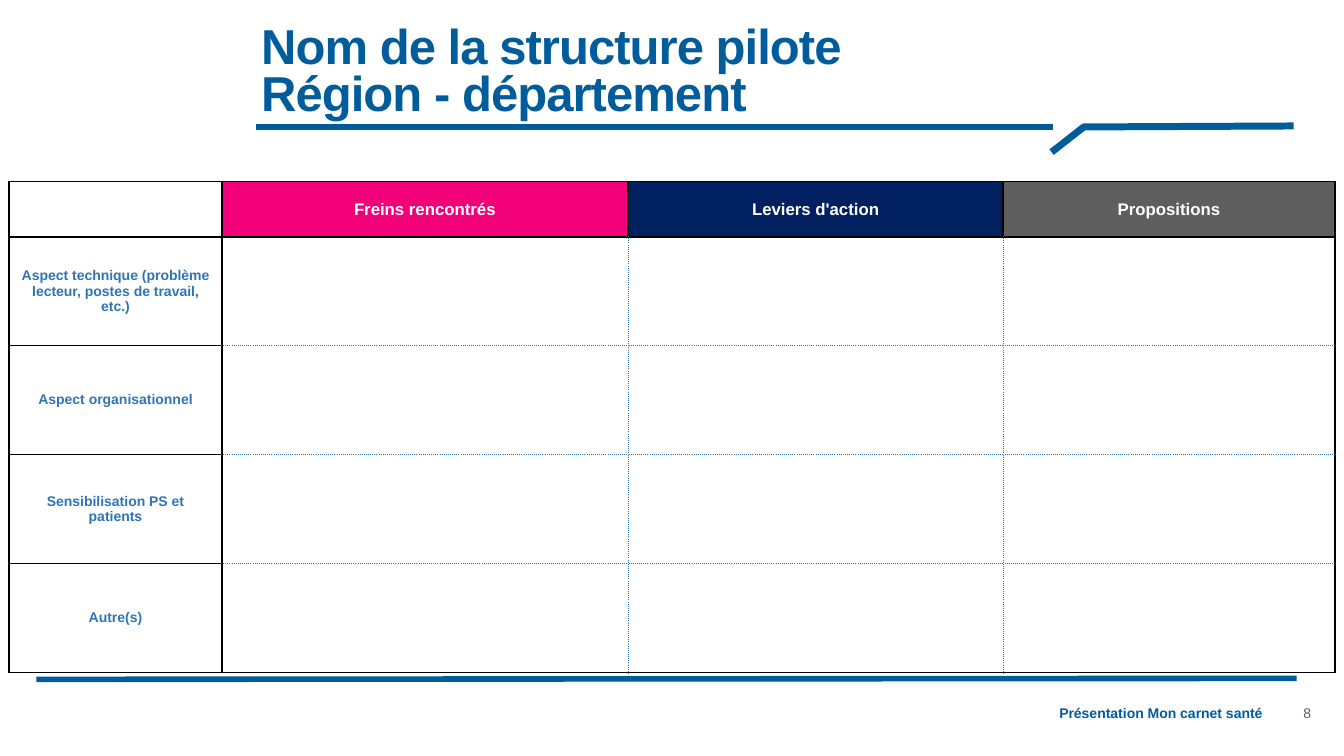
from lxml import etree
from pptx import Presentation
from pptx import util as u
from pptx.dml.color import RGBColor
from pptx.enum import dml, text
from pptx.enum.shapes import MSO_CONNECTOR
from pptx.oxml import ns

PX = 9144  # EMU per px, 100 px to the inch
FONT = "Arial"
COLORS = {
    "blue": "005C9B", "label": "2F75B5", "pink": "F10079", "navy": "002060",
    "grey": "5E5E5E", "white": "FFFFFF", "black": "000000",
}
HEADERS = [("Freins rencontrés", "pink"), ("Leviers d'action", "navy"),
           ("Propositions", "grey")]
ASPECTS = ["Aspect technique (problème lecteur, postes de travail, etc.)",
           "Aspect organisationnel", "Sensibilisation PS et patients", "Autre(s)"]
COL_WIDTHS = [211, 403, 372, 329]
ROW_HEIGHTS = [55] + [108] * len(ASPECTS)
SIDES = {"L": (0, -1), "R": (0, 1), "T": (-1, 0), "B": (1, 0)}


def px(n):
    return u.Emu(n * PX)


def rgb(name):
    return RGBColor.from_string(COLORS[name])


def add_run(p, words, size, color, bold=True):
    r = p.add_run()
    r.text = words
    r.font.name = FONT
    r.font.size = u.Pt(size)
    r.font.bold = bold
    r.font.color.rgb = rgb(color)
    return r


def set_frame(tf, margin_x, margin_y, anchor):
    tf.word_wrap = True
    tf.auto_size = text.MSO_AUTO_SIZE.NONE
    tf.vertical_anchor = anchor
    tf.margin_left = tf.margin_right = px(margin_x)
    tf.margin_top = tf.margin_bottom = px(margin_y)


def add_title(s, lines):
    sp = s.shapes.title
    sp.left, sp.top, sp.width, sp.height = map(px, (253, 2, 764, 124))
    set_frame(sp.text_frame, 6, 6, text.MSO_ANCHOR.BOTTOM)
    p = sp.text_frame.paragraphs[0]
    p.alignment = text.PP_ALIGN.LEFT
    p.line_spacing = 0.8
    for i, line in enumerate(lines):
        if i:
            p.add_line_break()
        r = add_run(p, line, 35, "blue")
        r.font._element.set("spc", "-70")


def add_text(s, box, words, color, bold, align, margin_x):
    sp = s.shapes.add_textbox(*map(px, box))
    set_frame(sp.text_frame, margin_x, 5, text.MSO_ANCHOR.TOP)
    p = sp.text_frame.paragraphs[0]
    p.alignment = align
    add_run(p, words, 10, color, bold)


def add_rule(s, x1, y1, x2, y2, weight):
    line = s.shapes.add_connector(MSO_CONNECTOR.STRAIGHT, *map(px, (x1, y1, x2, y2)))
    line.line.color.rgb = rgb("blue")
    line.line.width = u.Pt(weight)
    etree.SubElement(line._element.spPr, ns.qn("a:effectLst"))


def add_polyline(s, points, weight):
    builder = s.shapes.build_freeform(*points[0], scale=PX)
    builder.add_line_segments(points[1:], close=False)
    sp = builder.convert_to_shape()
    sp.fill.background()
    sp.line.color.rgb = rgb("blue")
    sp.line.width = u.Pt(weight)
    sp.shadow.inherit = False


def in_body(row, col):
    return 1 <= row < len(ROW_HEIGHTS) and 1 <= col < len(COL_WIDTHS)


def set_borders(cell, row, col):
    """Dotted between two body cells, solid black everywhere else."""
    tc_pr = cell._tc.get_or_add_tcPr()
    for side, (dr, dc) in SIDES.items():
        dotted = in_body(row, col) and in_body(row + dr, col + dc)
        weight, color, dash = (1, "label", "sysDot") if dotted else (1.22, "black", "solid")
        ln = etree.SubElement(tc_pr, ns.qn("a:ln" + side), w=str(u.Pt(weight)))
        fill = etree.SubElement(ln, ns.qn("a:solidFill"))
        etree.SubElement(fill, ns.qn("a:srgbClr"), val=COLORS[color])
        etree.SubElement(ln, ns.qn("a:prstDash"), val=dash)


def fill_cell(cell, words, size, color):
    cell.vertical_anchor = text.MSO_ANCHOR.MIDDLE
    p = cell.text_frame.paragraphs[0]
    p.alignment = text.PP_ALIGN.CENTER
    add_run(p, words, size, color)


def add_grid(s):
    frame = s.shapes.add_table(len(ROW_HEIGHTS), len(COL_WIDTHS), px(9), px(180),
                               px(sum(COL_WIDTHS)), px(sum(ROW_HEIGHTS)))
    table = frame.table
    table.first_row = table.horz_banding = False
    for column, width in zip(table.columns, COL_WIDTHS):
        column.width = px(width)
    for row, height in zip(table.rows, ROW_HEIGHTS):
        row.height = px(height)
    for row in range(len(ROW_HEIGHTS)):
        for col in range(len(COL_WIDTHS)):
            cell = table.cell(row, col)
            set_borders(cell, row, col)
            cell.fill.background()
    # Column headers and row labels
    for col, (words, color) in enumerate(HEADERS, 1):
        cell = table.cell(0, col)
        fill_cell(cell, words, 12, "white")
        cell.fill.solid()
        cell.fill.fore_color.rgb = rgb(color)
    for row, words in enumerate(ASPECTS, 1):
        fill_cell(table.cell(row, 0), words, 10, "label")


def main():
    prs = Presentation()
    prs.slide_width, prs.slide_height = px(1333), px(750)
    s = prs.slides.add_slide(prs.slide_layouts[5])

    # Rules under the title and above the footer
    add_rule(s, 254, 126, 1044, 126, 5)
    add_polyline(s, [(1043, 151), (1075, 126), (1283, 125)], 5)
    add_rule(s, 36, 674, 1286, 673, 4)

    # Title and table
    add_title(s, ["Nom de la structure pilote", "Région - département"])
    add_grid(s)

    # Footer
    add_text(s, (848, 694, 409, 35), "Présentation Mon carnet santé", "blue", True,
             text.PP_ALIGN.RIGHT, 5)
    add_text(s, (1271, 694, 51, 26), "8", "grey", False, text.PP_ALIGN.CENTER, 10)

    prs.save("out.pptx")


if __name__ == "__main__":
    main()
